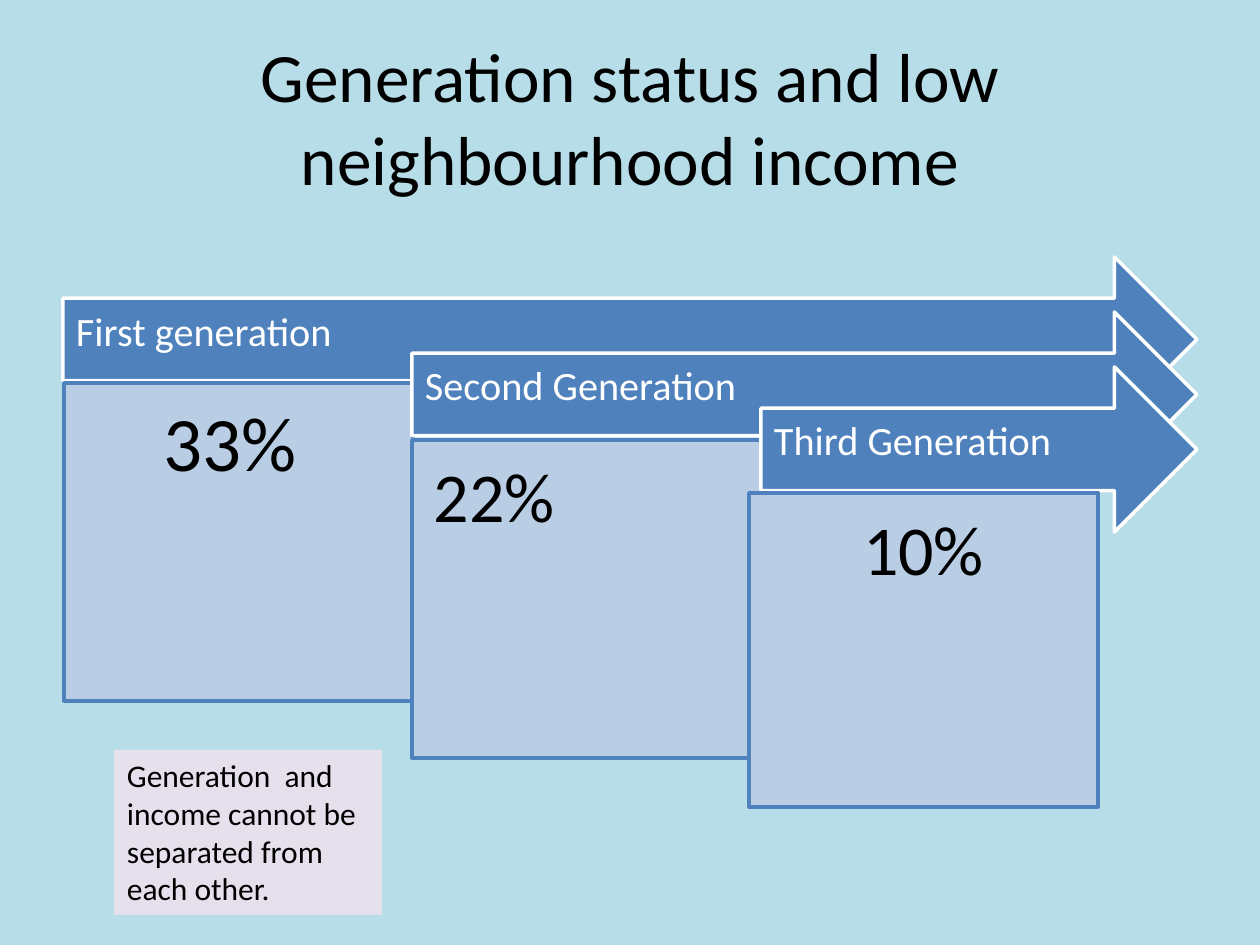
from pptx import Presentation
from pptx.dml.color import RGBColor
from pptx.enum.shapes import MSO_SHAPE
from pptx.enum.text import MSO_ANCHOR, PP_ALIGN
from pptx.util import Emu, Pt

PX = 914400 // 126
ARROW, RECTANGLE = MSO_SHAPE.RIGHT_ARROW, MSO_SHAPE.RECTANGLE
TOP, MIDDLE = MSO_ANCHOR.TOP, MSO_ANCHOR.MIDDLE
LEFT, CENTER = PP_ALIGN.LEFT, PP_ALIGN.CENTER
FONT = "Calibri"
COLORS = {
    "background": "B7DEE8",
    "arrow": "4F81BD",
    "panel": "B9CDE5",
    "note": "E6E0EC",
    "light": "FFFFFF",
    "text": "000000",
}

ARROW_LEFT, ARROW_TOP, ARROW_RIGHT, ARROW_HEIGHT = 63, 257, 1197, 165
STEP_X, STEP_Y = 349, 55
PANEL_WIDTH = 349

# label, share, share size, share alignment, panel left, top and height
GENERATIONS = [
    ("First generation", "33% ", 44, CENTER, 64, 383, 318),
    ("Second Generation", "22%", 40, LEFT, 412, 440, 318),
    ("Third Generation", "10%", 40, CENTER, 749, 493, 314),
]


def px(length):
    return Emu(length * PX)


def color(name):
    return RGBColor.from_string(COLORS[name])


def write(shape, text, size, ink="text", align=LEFT, anchor=TOP,
          insets=(13, 6, 13, 6), line_spacing=1.0):
    """Fill the shape with one paragraph; insets are left, top, right, bottom."""
    frame = shape.text_frame
    frame.word_wrap = True
    frame.vertical_anchor = anchor
    (frame.margin_left, frame.margin_top,
     frame.margin_right, frame.margin_bottom) = map(px, insets)
    paragraph = frame.paragraphs[0]
    paragraph.text = text
    paragraph.alignment = align
    paragraph.line_spacing = line_spacing
    paragraph.font.name = FONT
    paragraph.font.size = Pt(size)
    paragraph.font.color.rgb = color(ink)


def add_block(slide, preset, box, fill, outline=None):
    block = slide.shapes.add_shape(preset, *map(px, box))
    block.shadow.inherit = False
    block.fill.solid()
    block.fill.fore_color.rgb = color(fill)
    if outline:
        block.line.color.rgb = color(outline)
        block.line.width = Pt(2)
    else:
        block.line.fill.background()
    return block


def add_title(slide, text):
    title = slide.shapes.add_textbox(*map(px, (63, 38, 1134, 157)))
    write(title, text, 39.6, align=CENTER, anchor=MIDDLE)


def add_arrow(slide, step, label):
    left = ARROW_LEFT + step * STEP_X
    top = ARROW_TOP + step * STEP_Y
    box = (left, top, ARROW_RIGHT - left, ARROW_HEIGHT)
    arrow = add_block(slide, ARROW, box, "arrow", "light")
    write(arrow, label, 23, "light", anchor=MIDDLE,
          insets=(13, 13, 35, 26), line_spacing=0.9)


def add_panel(slide, box, share, size, align):
    panel = add_block(slide, RECTANGLE, box, "panel", "arrow")
    write(panel, share, size, align=align, insets=(22,) * 4, line_spacing=0.9)


def add_note(slide, text):
    note = add_block(slide, RECTANGLE, (114, 750, 268, 165), "note")
    write(note, text, 18)


def main():
    deck = Presentation()
    deck.slide_width, deck.slide_height = px(1260), px(945)
    slide = deck.slides.add_slide(deck.slide_layouts[6])
    slide.background.fill.solid()
    slide.background.fill.fore_color.rgb = color("background")

    add_title(slide, "Generation status and low neighbourhood income")
    for step, generation in enumerate(GENERATIONS):
        label, share, size, align, left, top, height = generation
        add_arrow(slide, step, label)
        add_panel(slide, (left, top, PANEL_WIDTH, height), share, size, align)
    add_note(slide, "Generation  and income cannot be separated from each other.")

    deck.save("out.pptx")


if __name__ == "__main__":
    main()
